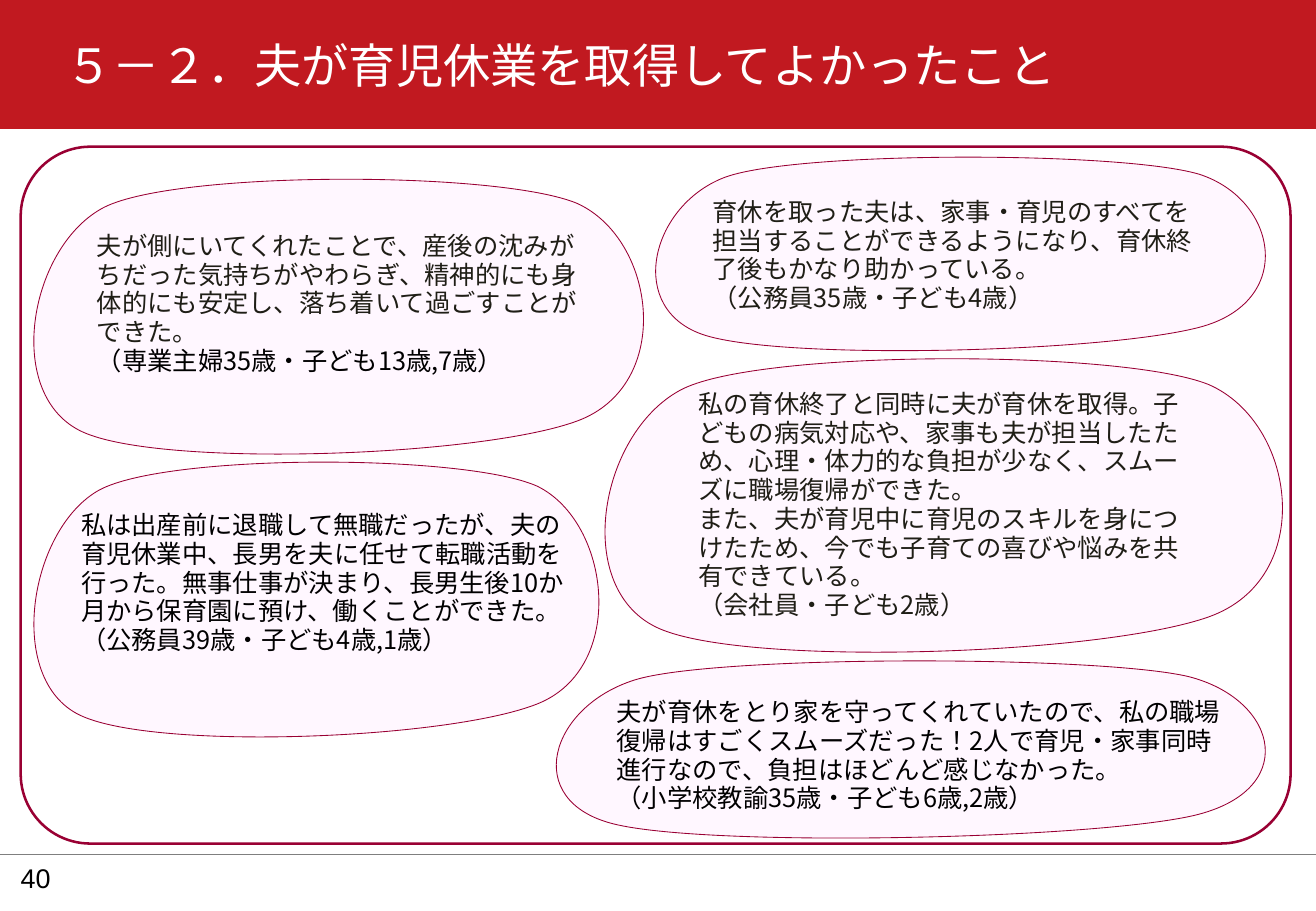
from lxml import etree
from pptx import Presentation
from pptx.dml.color import RGBColor
from pptx.enum.lang import MSO_LANGUAGE_ID
from pptx.enum.shapes import MSO_CONNECTOR, MSO_SHAPE
from pptx.enum.text import MSO_ANCHOR, PP_ALIGN
from pptx.oxml.ns import qn
from pptx.util import Inches, Pt

RECT, ROUND = MSO_SHAPE.RECTANGLE, MSO_SHAPE.ROUNDED_RECTANGLE
STRAIGHT = MSO_CONNECTOR.STRAIGHT
TOP, MIDDLE, LEFT = MSO_ANCHOR.TOP, MSO_ANCHOR.MIDDLE, PP_ALIGN.LEFT
JAPANESE = MSO_LANGUAGE_ID.JAPANESE

WIDTH, HEIGHT = Inches(10.83), Inches(7.5)
LATIN, KANJI = "Arial", "Noto Sans CJK JP"
COLORS = {"band": "C11920", "rule": "7F7F7F", "wine": "990033", "pink": "FFE7FF",
          "white": "FFFFFF", "black": "000000", "ink": "1F1E16"}

# Bubble outline in shares of its box: a start, then four Bezier curves.
START = (0.08, 0.92)
CURVES = [
    ((-0.05, 0.79), (-0.01, 0.26), (0.11, 0.11)),
    ((0.22, -0.03), (0.76, -0.03), (0.89, 0.09)),
    ((1.02, 0.22), (1.05, 0.75), (0.89, 0.88)),
    ((0.73, 1.01), (0.21, 1.05), START),
]

# Bubble box, text box (both in percent of the slide), text colours, paragraphs
VOICES = [
    ((42.3, 72.5, 53.9, 19.5), (45.95, 76, 48.85, 16.8), ("black", "black"), [
        "夫が育休をとり家を守ってくれていたので、私の職場復帰はすごくスムーズだった！"
        "2人で育児・家事同時進行なので、負担はほどんど感じなかった。",
        "（小学校教諭35歳・子ども6歳,2歳）"]),
    ((2.6, 50.65, 42.95, 30.25), (5.25, 55.45, 39.6, 27.5), ("black", "black"), [
        "私は出産前に退職して無職だったが、夫の育児休業中、長男を夫に任せて転職活動を"
        "行った。無事仕事が決まり、長男生後10か月から保育園に預け、働くことができた。",
        "（公務員39歳・子ども4歳,1歳）"]),
    ((46, 39.3, 51.5, 32.3), (52.15, 42.15, 39.05, 27.5), ("ink", "ink"), [
        "私の育休終了と同時に夫が育休を取得。子どもの病気対応や、家事も夫が担当したため、"
        "心理・体力的な負担が少なく、スムーズに職場復帰ができた。",
        "また、夫が育児中に育児のスキルを身につけたため、今でも子育ての喜びや悩みを"
        "共有できている。",
        "（会社員・子ども2歳）"]),
    ((49.85, 17.2, 46.35, 21.3), (53.25, 21.05, 39.05, 27.5), ("ink", "ink"), [
        "育休を取った夫は、家事・育児のすべてを担当することができるようになり、"
        "育休終了後もかなり助かっている。",
        "（公務員35歳・子ども4歳）"]),
    ((2.6, 19.6, 46.35, 30.25), (6.45, 24.8, 39.05, 27.5), ("ink", "black"), [
        "夫が側にいてくれたことで、産後の沈みがちだった気持ちがやわらぎ、"
        "精神的にも身体的にも安定し、落ち着いて過ごすことができた。",
        "（専業主婦35歳・子ども13歳,7歳）"]),
]


def color(name):
    return RGBColor.from_string(COLORS[name])


def place(x, y, w, h):
    """Turn percent of the slide into lengths."""
    return (round(WIDTH * x / 100), round(HEIGHT * y / 100),
            round(WIDTH * w / 100), round(HEIGHT * h / 100))


def style(shape, fill, line, width=0):
    shape.shadow.inherit = False
    if fill:
        shape.fill.solid()
        shape.fill.fore_color.rgb = color(fill)
    else:
        shape.fill.background()
    if line:
        shape.line.color.rgb = color(line)
        shape.line.width = Pt(width)
    else:
        shape.line.fill.background()


def set_font(para, face, size, hue):
    font = para.font
    font.name, font.size, font.language_id = face, Pt(size), JAPANESE
    font.color.rgb = color(hue)
    etree.SubElement(font._rPr, qn("a:ea"), typeface=KANJI)


def add_band(slide):
    """Draw the heading band behind the title."""
    band = slide.shapes.add_shape(RECT, *place(0, 0, 100, 14.15))
    style(band, "band", None)
    slide.shapes._spTree.insert(2, band._element)


def set_title(slide, text):
    title = slide.shapes.title
    title.left, title.top, title.width, title.height = place(5, 4, 90, 9.5)
    frame = title.text_frame
    frame.text = text
    frame.vertical_anchor = TOP
    frame.margin_left = frame.margin_right = frame.margin_top = 0
    frame.margin_bottom = Inches(0.06)
    para = frame.paragraphs[0]
    para.alignment = LEFT
    set_font(para, LATIN, 28, "white")


def add_rule(slide):
    x, y, w, _ = place(0, 93.75, 100, 0)
    rule = slide.shapes.add_connector(STRAIGHT, x, y, x + w, y)
    rule.line.color.rgb = color("rule")
    rule.line.width = Pt(0.25)
    etree.SubElement(rule._element.spPr, qn("a:effectLst"))


def add_page(slide, number):
    box = slide.shapes.add_textbox(*place(1.57, 93.75, 3.7, 5.2))
    frame = box.text_frame
    frame.text = number
    frame.vertical_anchor = MIDDLE
    frame.margin_left = frame.margin_right = 0
    set_font(frame.paragraphs[0], LATIN, 16, "black")


def add_frame(slide):
    frame = slide.shapes.add_shape(ROUND, *place(1.57, 16.1, 96.5, 76.5))
    frame.adjustments[0] = 0.1
    style(frame, None, "wine", 1.5)


def add_step(outline, kind, points, w, h):
    """Append one move or curve, its points given in shares of w and h."""
    step = etree.SubElement(outline, qn(kind))
    for x, y in points:
        etree.SubElement(step, qn("a:pt"), x=str(round(x * w)), y=str(round(y * h)))


def add_bubble(slide, box):
    x, y, w, h = place(*box)
    pen = slide.shapes.build_freeform(x, y)
    pen.add_line_segments([(x + w, y), (x + w, y + h), (x, y + h)])
    bubble = pen.convert_to_shape()
    style(bubble, "pink", "wine", 0.5)
    props = bubble._element.spPr
    outline = props.find(".//" + qn("a:pathLst"))[0]
    for step in list(outline):
        outline.remove(step)
    add_step(outline, "a:moveTo", [START], w, h)
    for curve in CURVES:
        add_step(outline, "a:cubicBezTo", curve, w, h)
    etree.SubElement(outline, qn("a:close"))
    tint = props.find(qn("a:solidFill"))[0]
    etree.SubElement(tint, qn("a:alpha"), val="30000")


def add_voice(slide, box, hues, texts):
    frame = slide.shapes.add_textbox(*place(*box)).text_frame
    frame.word_wrap = True
    frame.text = "\n".join(texts)
    for para in frame.paragraphs:
        para.line_spacing = Pt(17)
        set_font(para, KANJI, 15, hues[0])
    if hues[1] != hues[0]:
        para.font.color.rgb = color(hues[1])


def main():
    deck = Presentation()
    deck.slide_width, deck.slide_height = WIDTH, HEIGHT
    slide = deck.slides.add_slide(deck.slide_layouts[5])
    add_band(slide)
    set_title(slide, "５－２．夫が育児休業を取得してよかったこと")
    add_rule(slide)
    add_page(slide, "40")
    add_frame(slide)
    for bubble, box, hues, texts in VOICES:
        add_bubble(slide, bubble)
        add_voice(slide, box, hues, texts)
    deck.save("out.pptx")


if __name__ == "__main__":
    main()
